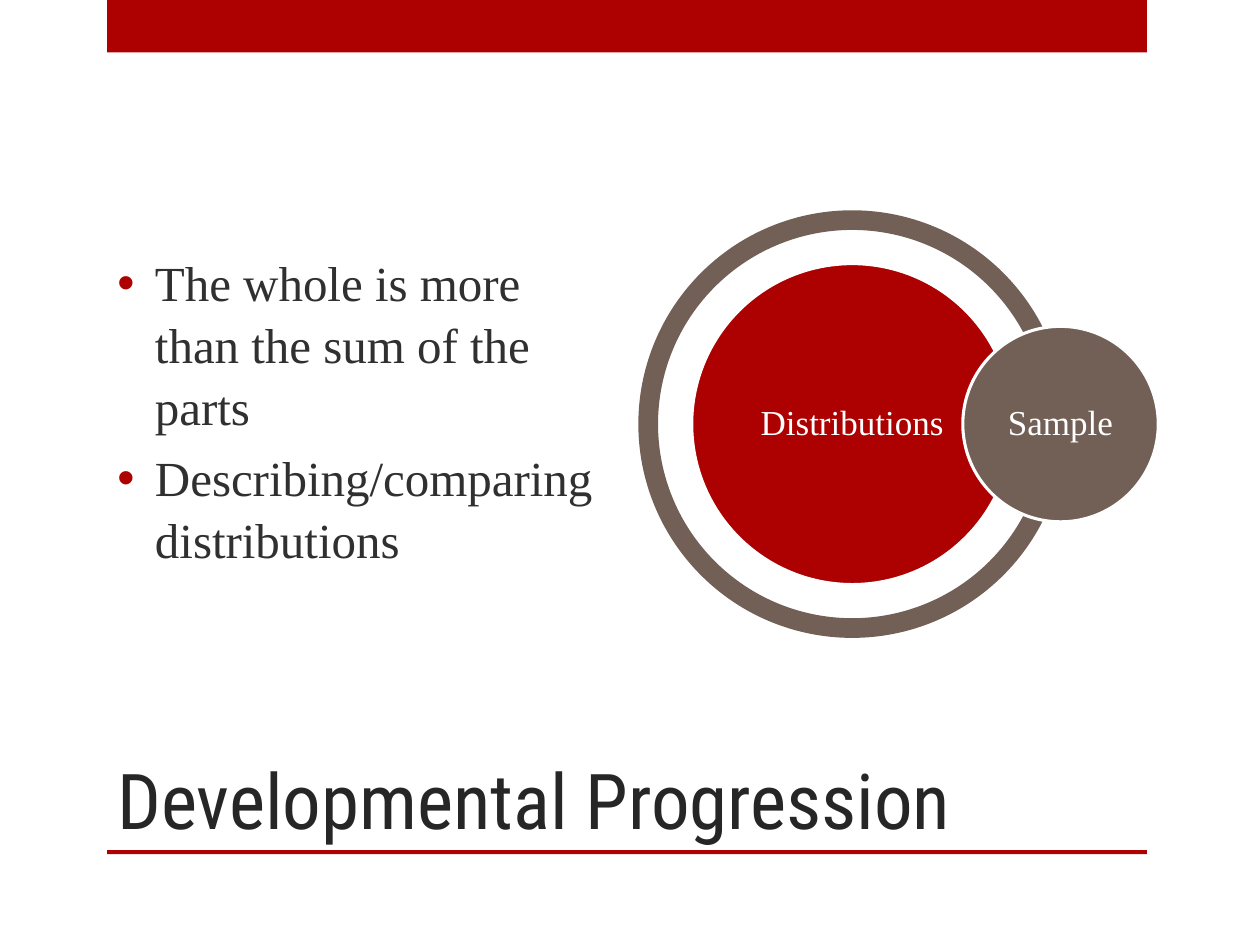
from lxml.etree import SubElement
from pptx import Presentation
from pptx.dml.color import RGBColor
from pptx.enum.shapes import MSO_SHAPE
from pptx.enum.text import MSO_ANCHOR, MSO_AUTO_SIZE, PP_ALIGN
from pptx.oxml.ns import qn
from pptx.util import Cm, Pt

RED = RGBColor(0xAD, 0x01, 0x01)
BROWN = RGBColor(0x72, 0x60, 0x56)
WHITE = RGBColor(0xFF, 0xFF, 0xFF)
TITLE_COLOR = RGBColor(0x26, 0x26, 0x26)
BODY_COLOR = RGBColor(0x30, 0x30, 0x30)
TITLE_FONT = "Roboto Condensed"
BODY_FONT = "Times New Roman"


def write_text(paragraph, text, *, size, color, font=BODY_FONT,
               align=PP_ALIGN.LEFT, line_spacing=None, before=None, after=None):
    paragraph.alignment = align
    paragraph.line_spacing = line_spacing
    paragraph.space_before = before
    paragraph.space_after = after
    run = paragraph.add_run()
    run.text = text
    run.font.size = Pt(size)
    run.font.name = font
    run.font.color.rgb = color


def add_bullet(paragraph, color, indent):
    properties = paragraph._p.get_or_add_pPr()
    properties.set("marL", str(indent))
    properties.set("indent", str(-indent))
    bullet_color = SubElement(properties, qn("a:buClr"))
    SubElement(bullet_color, qn("a:srgbClr"), val=str(color))
    SubElement(properties, qn("a:buFont"), typeface="Arial")
    SubElement(properties, qn("a:buChar"), char="•")


class SlideBuilder:
    bullet_indent = Cm(0.76)
    circle_inset = Cm(0.08)
    circle_outline = Pt(1.75)

    def __init__(self, slide):
        self.slide = slide

    def place(self, placeholder, left, top, width, height, anchor):
        placeholder.left, placeholder.top = Cm(left), Cm(top)
        placeholder.width, placeholder.height = Cm(width), Cm(height)
        frame = placeholder.text_frame
        frame.word_wrap = True
        frame.auto_size = MSO_AUTO_SIZE.NONE
        frame.vertical_anchor = anchor
        return frame

    def title(self, text, *box):
        frame = self.place(self.slide.shapes.title, *box, MSO_ANCHOR.BOTTOM)
        write_text(frame.paragraphs[0], text, size=44, color=TITLE_COLOR, font=TITLE_FONT)

    def bullets(self, items, *box):
        frame = self.place(self.slide.placeholders[1], *box, MSO_ANCHOR.MIDDLE)
        for index, item in enumerate(items):
            paragraph = frame.add_paragraph() if index else frame.paragraphs[0]
            write_text(paragraph, item, size=28, color=BODY_COLOR,
                       line_spacing=1.05, before=Pt(5.6))
            add_bullet(paragraph, RED, self.bullet_indent)

    def shape(self, kind, left, top, width, height, color):
        shape = self.slide.shapes.add_shape(kind, Cm(left), Cm(top), Cm(width), Cm(height))
        shape.shadow.inherit = False
        shape.fill.solid()
        shape.fill.fore_color.rgb = color
        shape.line.fill.background()
        return shape

    def bar(self, top, height):
        self.shape(MSO_SHAPE.RECTANGLE, 2.16, top, 20.96, height, RED)

    def ring(self, center_x, center_y, diameter, color):
        ring = self.shape(MSO_SHAPE.BLOCK_ARC, center_x - diameter / 2,
                          center_y - diameter / 2, diameter, diameter, color)
        for index, value in enumerate((0.144, 215.856, 0.046)):
            ring.adjustments[index] = value

    def circle(self, text, center_x, center_y, diameter, color):
        circle = self.shape(MSO_SHAPE.OVAL, center_x - diameter / 2,
                            center_y - diameter / 2, diameter, diameter, color)
        circle.line.color.rgb = WHITE
        circle.line.width = self.circle_outline
        frame = circle.text_frame
        frame.word_wrap = True
        frame.vertical_anchor = MSO_ANCHOR.MIDDLE
        frame.margin_left = frame.margin_right = self.circle_inset
        frame.margin_top = frame.margin_bottom = self.circle_inset
        write_text(frame.paragraphs[0], text, size=20, color=WHITE,
                   align=PP_ALIGN.CENTER, line_spacing=0.9, after=Pt(7))


def main():
    presentation = Presentation()
    presentation.slide_width, presentation.slide_height = Cm(25.4), Cm(19.05)
    builder = SlideBuilder(presentation.slides.add_slide(presentation.slide_layouts[1]))

    builder.bar(0, 1.06)
    builder.bar(17.14, 0.08)
    builder.title("Developmental Progression", 2.11, 12.7, 18.85, 4.45)
    builder.bullets(
        ["The whole is more than the sum of the parts",
         "Describing/comparing distributions"],
        2.11, 3.02, 10.16, 10.46)

    center_x, center_y = 17.18, 8.55
    builder.ring(center_x, center_y, 8.62, BROWN)
    builder.circle("Distributions", center_x, center_y, 6.47, RED)
    builder.circle("Sample", 21.38, center_y, 3.94, BROWN)

    presentation.save("out.pptx")


if __name__ == "__main__":
    main()
